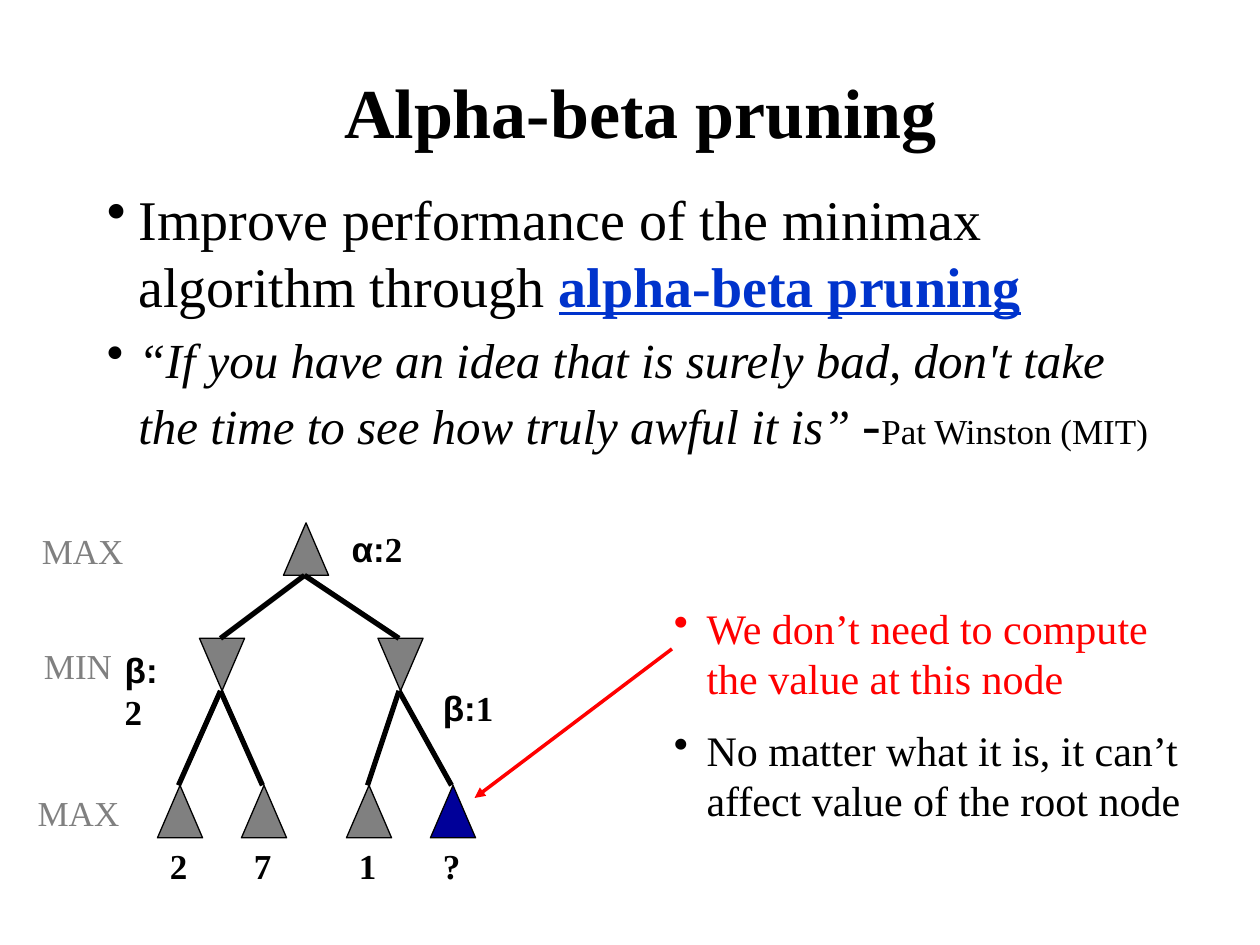
"""Build the alpha-beta pruning slide with its game tree."""
from lxml.etree import SubElement
from pptx import Presentation
from pptx.dml.color import RGBColor
from pptx.enum.shapes import MSO_CONNECTOR, MSO_SHAPE
from pptx.enum.text import MSO_ANCHOR, PP_ALIGN
from pptx.oxml.ns import qn
from pptx.util import Inches, Pt

COLORS = {"ink": "000000", "term": "0033CC", "node": "808080", "pruned": "000099", "alert": "FF0000"}
SERIF, SANS = "Times New Roman", "Arial"

deck = Presentation()
deck.slide_width, deck.slide_height = Inches(10), Inches(7.5)
cell = deck.slide_width / 120
slide = deck.slides.add_slide(deck.slide_layouts[5])


def write(paragraph, runs, **shared):
    for words, own in runs:
        run = paragraph.add_run()
        run.text = words
        style = {"name": SERIF, "size": 20, "color": "ink", **shared, **own}
        run.font.color.rgb = RGBColor.from_string(COLORS[style.pop("color")])
        style["size"] = Pt(style["size"])
        for key, value in style.items():
            setattr(run.font, key, value)


def connect(shapes, start, end, color, width):
    line = shapes.add_connector(MSO_CONNECTOR.STRAIGHT, *[round(v * cell) for v in (*start, *end)])
    line.line.color.rgb = RGBColor.from_string(COLORS[color])
    line.line.width = Pt(width)
    SubElement(line._element.spPr, qn("a:effectLst"))
    return line


title = slide.shapes.title
for side, cells in {"left": 10, "top": 3, "width": 102, "height": 15}.items():
    setattr(title, side, round(cells * cell))
title.text_frame.vertical_anchor = MSO_ANCHOR.MIDDLE
heading = title.text_frame.paragraphs[0]
heading.alignment = PP_ALIGN.CENTER
write(heading, [("Alpha-beta pruning", {})], size=40, bold=True)

bullet_lists = [
    ((9, 17, 102, 54), 0.25, 6, [
        [("Improve performance of the minimax algorithm through ", {"size": 32}),
         ("alpha-beta pruning", {"size": 32, "color": "term", "bold": True, "underline": True})],
        [("“If you have an idea that is surely bad, don't take the time to see how truly awful it is” ",
          {"size": 28, "italic": True}),
         ("-", {"size": 32}), ("Pat Winston (MIT)", {})]]),
    ((63, 56.8, 53, 23), 0.26, 12, [
        [("We don’t need to compute the value at this node", {"size": 24, "color": "alert"})],
        [("No matter what it is, it can’t affect value of the root node", {"size": 24})]]),
]
for place, indent, gap, points in bullet_lists:
    frame = slide.shapes.add_textbox(*[round(v * cell) for v in place]).text_frame
    frame.word_wrap = True
    for index, runs in enumerate(points):
        point = frame.add_paragraph() if index else frame.paragraphs[0]
        point.space_before = Pt(gap if index else 0)
        properties = point._p.get_or_add_pPr()
        properties.set("marL", str(Inches(indent)))
        properties.set("indent", str(-Inches(indent)))
        SubElement(properties, qn("a:buChar")).set("char", "•")
        write(point, runs)

root_row, min_row, leaf_row, value_row = 49.8, 60.8, 74.8, 79.8
node_width, node_height = 4.3, 5
root = (27, root_row)
branches = {19: [(15, "2"), (23, "7")], 36: [(33, "1"), (41, "?")]}
nodes, edges, labels = [(root, "node", False)], [], []
for column, leaves in branches.items():
    nodes.append(((column, min_row), "node", True))
    edges.append((root, (column, min_row)))
    for leaf, value in leaves:
        nodes.append(((leaf, leaf_row), "pruned" if value == "?" else "node", False))
        edges.append(((column, min_row), (leaf, leaf_row)))
        labels.append(((leaf, value_row, 4), [(value, {"bold": True})], False))

tree = slide.shapes.add_group_shape().shapes
for (column, row), color, inverted in nodes:
    node = tree.add_shape(MSO_SHAPE.ISOSCELES_TRIANGLE,
                          *[round(v * cell) for v in (column, row, node_width, node_height)])
    node.shadow.inherit = False
    node.fill.solid()
    node.fill.fore_color.rgb = RGBColor.from_string(COLORS[color])
    node.line.color.rgb = RGBColor.from_string(COLORS["ink"])
    node.line.width = Pt(0.75)
    if inverted:
        node._element.spPr.xfrm.set("flipV", "1")
for (parent, upper), (child, lower) in edges:
    connect(tree, (parent + 2, upper + node_height), (child + 2, lower), "ink", 3)

for place, symbol, value, wraps in [((32.3, 49.6, 8), "α:", "2", False),
                                    ((10.7, 61.2, 7), "β:", "2", True),
                                    ((41, 64.8, 8), "β:", "1", False)]:
    labels.append((place, [(symbol, {"name": SANS, "bold": True}), (value, {"bold": True})], wraps))
for place, level in [((2.8, root_row, 12), "MAX"), ((3, min_row, 10), "MIN"), ((2.4, leaf_row, 12), "MAX")]:
    labels.append((place, [(level, {"color": "node"})], False))
for (column, row, width), runs, wraps in labels:
    frame = slide.shapes.add_textbox(*[round(v * cell) for v in (column, row, width, 5.2)]).text_frame
    frame.word_wrap = wraps
    write(frame.paragraphs[0], runs)

pointer = connect(slide.shapes, (64, 61.8), (45.2, 76), "alert", 2)
SubElement(pointer.line._get_or_add_ln(), qn("a:tailEnd")).set("type", "triangle")

deck.save("out.pptx")
